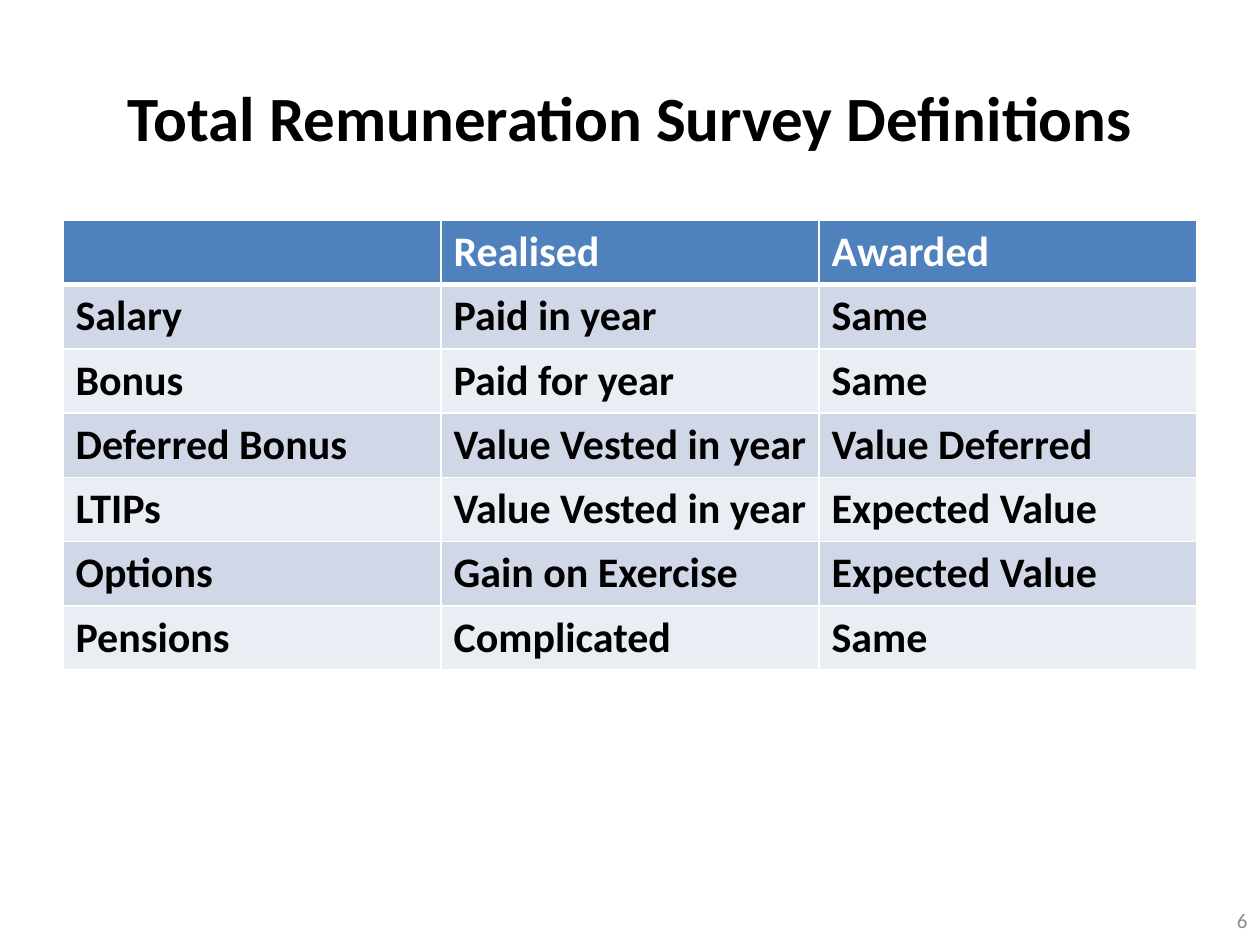
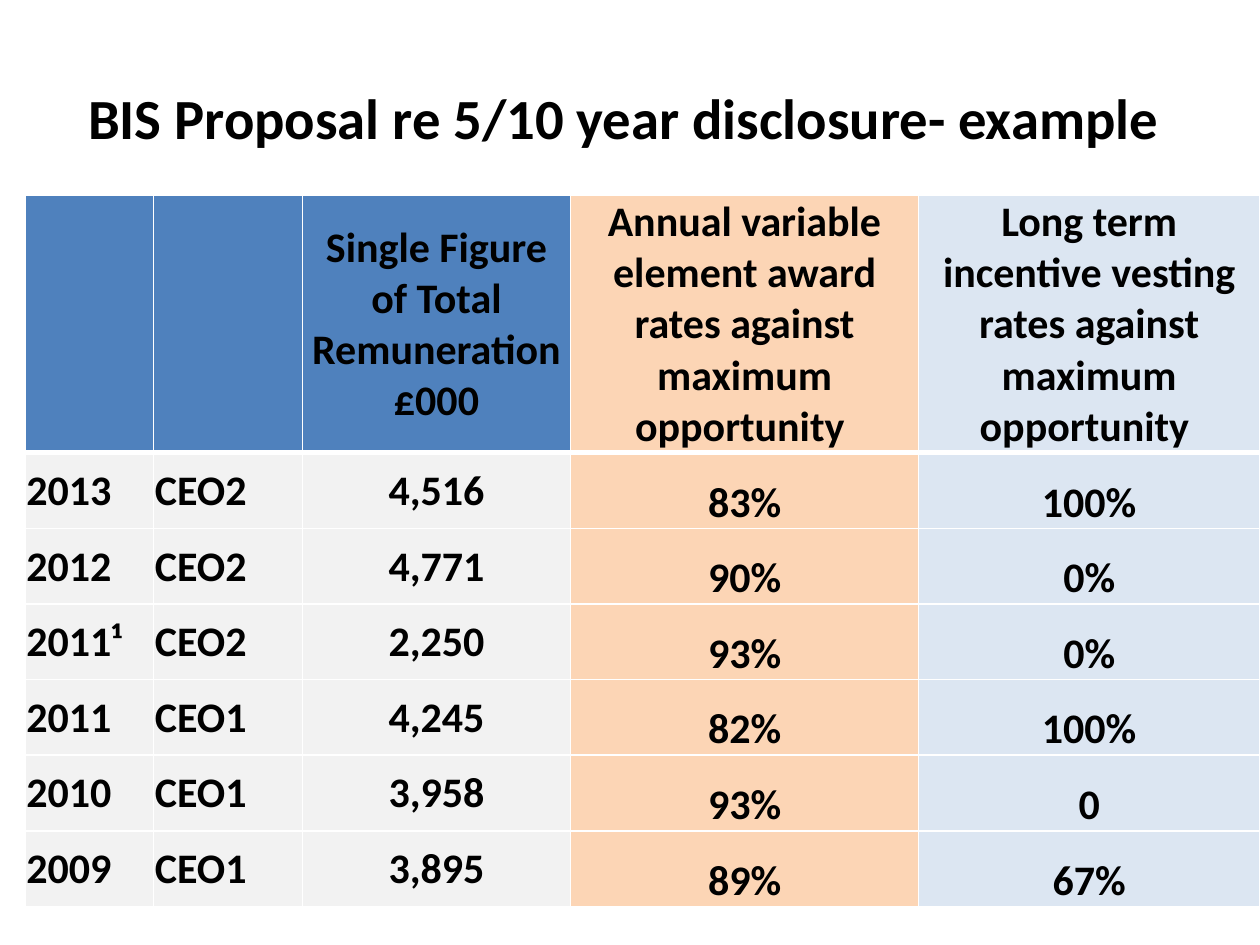
from lxml import etree
from pptx import Presentation
from pptx.dml.color import RGBColor
from pptx.enum.text import MSO_ANCHOR, PP_ALIGN
from pptx.oxml.ns import qn
from pptx.util import Inches, Pt

LEFT, CENTER, RIGHT = PP_ALIGN.LEFT, PP_ALIGN.CENTER, PP_ALIGN.RIGHT
TOP, MIDDLE, BOTTOM = MSO_ANCHOR.TOP, MSO_ANCHOR.MIDDLE, MSO_ANCHOR.BOTTOM

COLORS = {
    "text": "000000",
    "white": "FFFFFF",
    "header": "4F81BD",
    "band_dark": "D0D8E8",
    "band_light": "E9EDF4",
    "neutral": "F2F2F2",
    "annual": "FCD5B5",
    "long_term": "DCE6F2",
    "page_number": "8C8C8C",
}
FONT = "Calibri"
TITLE_ONLY = 5
TITLE_BOX = (0.5, 0.3, 9, 1.25)
PAGE_NUMBER_BOX = (9.33, 7.1, 0.67, 0.4)
TABLE_TEXT_SIZE = 24
THIN, THICK = 1, 3

DEFINITIONS = [
    ("", "Realised", "Awarded"),
    ("Salary", "Paid in year", "Same"),
    ("Bonus", "Paid for year", "Same"),
    ("Deferred Bonus", "Value Vested in year", "Value Deferred"),
    ("LTIPs", "Value Vested in year", "Expected Value"),
    ("Options", "Gain on Exercise", "Expected Value"),
    ("Pensions", "Complicated", "Same"),
]

DISCLOSURE = [
    ("", "", "Single Figure of Total Remuneration\n£000",
     "Annual variable element award rates against maximum opportunity ",
     "Long term incentive vesting rates against maximum opportunity "),
    ("2013", "CEO2", "4,516", "83%", "100%"),
    ("2012", "CEO2", "4,771", "90%", "0%"),
    ("2011¹", "CEO2", "2,250", "93%", "0%"),
    ("2011", "CEO1", "4,245", "82%", "100%"),
    ("2010", "CEO1", "3,958", "93%", "0"),
    ("2009", "CEO1", "3,895", "89%", "67%"),
]
# Header fill, body fill, alignment and anchor of each disclosure column
DISCLOSURE_COLUMNS = [
    ("header", "neutral", LEFT, MIDDLE),
    ("header", "neutral", LEFT, MIDDLE),
    ("header", "neutral", CENTER, MIDDLE),
    ("annual", "annual", CENTER, BOTTOM),
    ("long_term", "long_term", CENTER, BOTTOM),
]
TIGHT_MARGINS = {"margin_left": Inches(0.01), "margin_top": Inches(0.01),
                 "margin_right": Inches(0.01), "margin_bottom": 0}


def set_attributes(target, values):
    for name, value in values.items():
        setattr(target, name, value)


def format_text(frame, size, color="text", bold=True, align=LEFT):
    for paragraph in frame.paragraphs:
        paragraph.alignment = align
        set_attributes(paragraph.font,
                       {"name": FONT, "size": Pt(size), "bold": bold})
        paragraph.font.color.rgb = RGBColor.from_string(COLORS[color])


def place(shape, box):
    set_attributes(shape, dict(zip(("left", "top", "width", "height"),
                                   map(Inches, box))))


def add_titled_slide(deck, title, size):
    slide = deck.slides.add_slide(deck.slide_layouts[TITLE_ONLY])
    heading = slide.shapes.title
    place(heading, TITLE_BOX)
    heading.text_frame.text = title
    heading.text_frame.vertical_anchor = MIDDLE
    format_text(heading.text_frame, size, align=CENTER)
    return slide


def add_page_number(slide, number, box):
    frame = slide.shapes.add_textbox(*map(Inches, box)).text_frame
    frame.word_wrap = True
    frame.vertical_anchor = MIDDLE
    frame.text = str(number)
    format_text(frame, 12, "page_number", bold=False, align=RIGHT)


def add_borders(cell, row):
    """White rules, with a thick one between the header and the body."""
    widths = {"lnL": THIN, "lnR": THIN,
              "lnT": THICK if row == 1 else THIN,
              "lnB": THICK if row == 0 else THIN}
    properties = cell._tc.get_or_add_tcPr()
    for tag, width in widths.items():
        line = etree.SubElement(properties, qn(f"a:{tag}"), w=str(Pt(width)))
        fill = etree.SubElement(line, qn("a:solidFill"))
        etree.SubElement(fill, qn("a:srgbClr"), val=COLORS["white"])


def add_grid(slide, records, left, top, column_widths, row_heights, cell_style):
    """Draw a table; cell_style(row, column) gives fill, text colour,
    alignment and a dict of cell attributes."""
    table = slide.shapes.add_table(
        len(records), len(column_widths), Inches(left), Inches(top),
        Inches(sum(column_widths)), Inches(sum(row_heights))).table
    table.horz_banding = False
    for column, width in zip(table.columns, column_widths):
        column.width = Inches(width)
    for table_row, height in zip(table.rows, row_heights):
        table_row.height = Inches(height)
    for row, record in enumerate(records):
        for column, text in enumerate(record):
            fill, color, align, layout = cell_style(row, column)
            cell = table.cell(row, column)
            cell.text = text
            format_text(cell.text_frame, TABLE_TEXT_SIZE, color, align=align)
            set_attributes(cell, layout)
            add_borders(cell, row)
            cell.fill.solid()
            cell.fill.fore_color.rgb = RGBColor.from_string(COLORS[fill])


def definition_style(row, column):
    layout = {"vertical_anchor": TOP}
    if row == 0:
        return "header", "white", LEFT, layout
    return "band_dark" if row % 2 else "band_light", "text", LEFT, layout


def disclosure_style(row, column):
    header, body, align, anchor = DISCLOSURE_COLUMNS[column]
    fill = body if row else header
    return fill, "text", align, {"vertical_anchor": anchor, **TIGHT_MARGINS}


def build_definitions_slide(deck):
    slide = add_titled_slide(deck, "Total Remuneration Survey Definitions", 36)
    add_grid(slide, DEFINITIONS, 0.5, 1.75, [3] * 3,
             [0.51] * len(DEFINITIONS), definition_style)
    add_page_number(slide, 6, PAGE_NUMBER_BOX)


def build_disclosure_slide(deck):
    slide = add_titled_slide(
        deck, "BIS Proposal re 5/10 year disclosure- example ", 32.4)
    add_grid(slide, DISCLOSURE, 0.2, 1.55, [1.02, 1.18, 2.13, 2.76, 2.71],
             [2.04] + [0.6] * (len(DISCLOSURE) - 1), disclosure_style)


def main():
    deck = Presentation()
    deck.slide_width, deck.slide_height = Inches(10), Inches(7.5)
    build_definitions_slide(deck)
    build_disclosure_slide(deck)
    deck.save("out.pptx")


if __name__ == "__main__":
    main()
